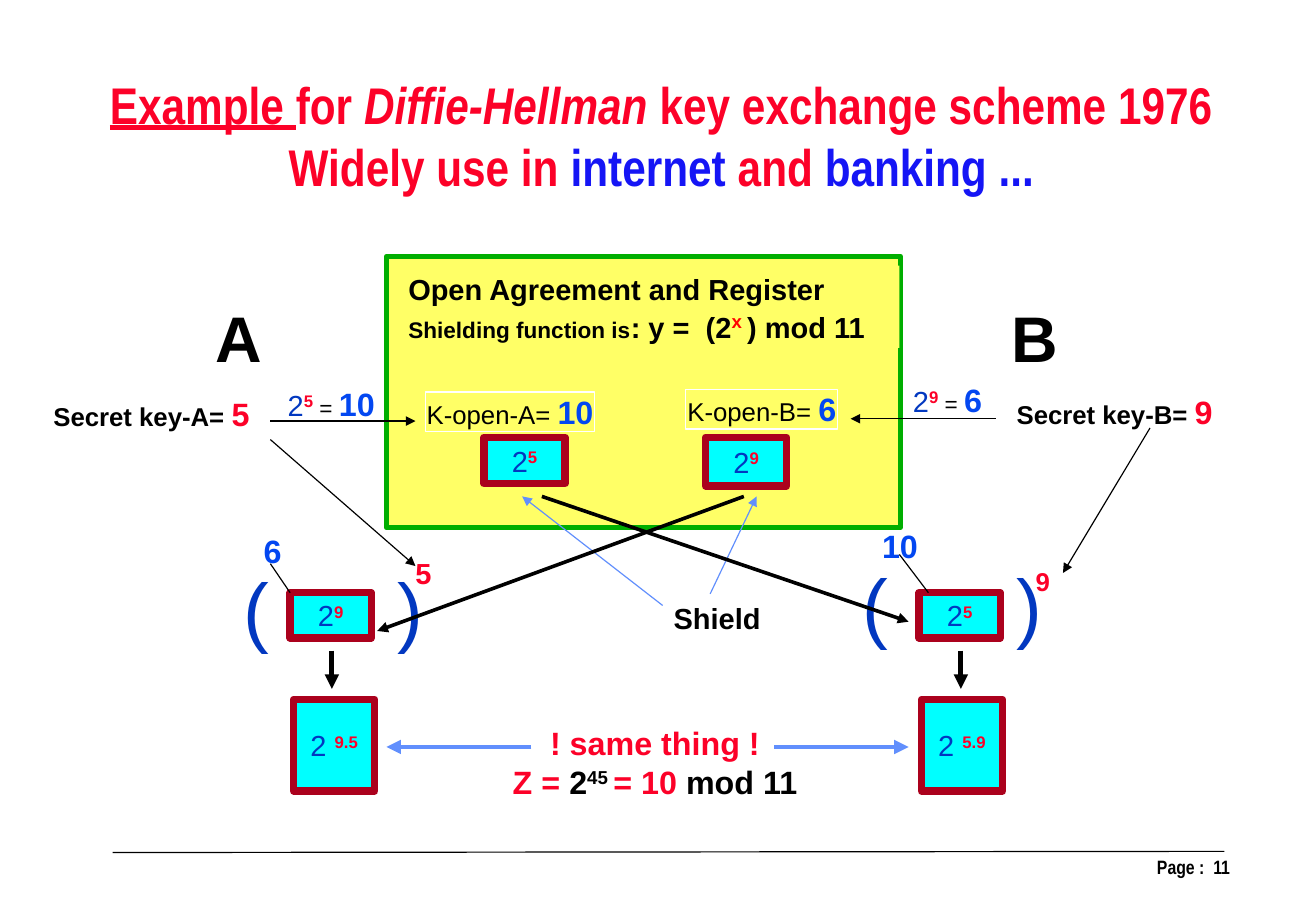
from dataclasses import dataclass, field
from typing import Any

from lxml.etree import SubElement
from pptx import Presentation
from pptx.dml.color import RGBColor
from pptx.enum.shapes import MSO_CONNECTOR, MSO_SHAPE
from pptx.enum.text import MSO_ANCHOR, MSO_AUTO_SIZE, PP_ALIGN
from pptx.oxml.ns import qn
from pptx.util import Inches, Pt

COLORS = {
    "black": "000000", "white": "FFFFFF", "red": "FC0128", "bright red": "FF0000",
    "blue": "0238C0", "key blue": "0347F1", "title blue": "1515F5", "arrow blue": "618FFD",
    "cyan": "00FFFF", "maroon": "AB011D", "yellow": "FFFF66", "green": "00AE00",
}


@dataclass
class Span:
    text: str
    size: float
    color: str = "black"
    bold: bool = True
    raised: bool = False
    extra: dict[str, Any] = field(default_factory=dict)


@dataclass
class Label:
    left: float
    top: float
    width: float
    height: float
    lines: list[list[Span]]
    align: PP_ALIGN = PP_ALIGN.CENTER
    wrap: bool = False
    margins: tuple[float, float] = (0.1, 0.05)
    spacing: float = 1.0
    tab: float = 0


@dataclass
class Panel:
    label: Label
    fill: str = ""
    line: str = ""
    weight: float = 0
    anchor: MSO_ANCHOR = MSO_ANCHOR.TOP


@dataclass
class Line:
    start: tuple[float, float]
    end: tuple[float, float]
    color: str = "black"
    weight: float = 0.75
    arrow: bool = True


def rgb(name: str) -> RGBColor:
    return RGBColor.from_string(COLORS[name])


def set_all(target: Any, values: dict[str, Any]) -> None:
    for name, value in values.items():
        setattr(target, name, value)


def write(box: Any, label: Label, font: str = "Arial", anchor: MSO_ANCHOR = MSO_ANCHOR.TOP,
          auto_size: MSO_AUTO_SIZE = MSO_AUTO_SIZE.NONE) -> None:
    frame = box.text_frame
    side, edge = (Inches(margin) for margin in label.margins)
    set_all(frame, {"margin_left": side, "margin_right": side, "margin_top": edge,
                    "margin_bottom": edge, "word_wrap": label.wrap,
                    "vertical_anchor": anchor, "auto_size": auto_size})
    for index, line in enumerate(label.lines):
        para = frame.add_paragraph() if index else frame.paragraphs[0]
        set_all(para, {"alignment": label.align, "line_spacing": label.spacing})
        if label.tab:
            stops = SubElement(para._p.get_or_add_pPr(), qn("a:tabLst"))
            SubElement(stops, qn("a:tab"), pos=str(Inches(label.tab)), algn="l")
        for item in line:
            span = para.add_run()
            span.text = item.text
            set_all(span.font, {"name": font, "size": Pt(item.size), "bold": item.bold, **item.extra})
            span.font.color.rgb = rgb(item.color)
            if item.raised:
                span._r.get_or_add_rPr().set("baseline", "30000")


def frame_of(label: Label) -> list[int]:
    return [Inches(value) for value in (label.left, label.top, label.width, label.height)]


def draw_label(page: Any, label: Label, font: str = "Arial") -> None:
    box = page.shapes.add_textbox(*frame_of(label))
    write(box, label, font, auto_size=MSO_AUTO_SIZE.SHAPE_TO_FIT_TEXT)


def draw_panel(page: Any, panel: Panel) -> None:
    box = page.shapes.add_shape(MSO_SHAPE.RECTANGLE, *frame_of(panel.label))
    box.shadow.inherit = False
    if panel.fill:
        box.fill.solid()
        box.fill.fore_color.rgb = rgb(panel.fill)
    else:
        box.fill.background()
    if panel.line:
        box.line.color.rgb = rgb(panel.line)
        box.line.width = Pt(panel.weight)
    else:
        box.line.fill.background()
    write(box, panel.label, anchor=panel.anchor)


def draw_line(page: Any, line: Line) -> None:
    points = [Inches(value) for value in (*line.start, *line.end)]
    connector = page.shapes.add_connector(MSO_CONNECTOR.STRAIGHT, *points)
    connector.line.color.rgb = rgb(line.color)
    connector.line.width = Pt(line.weight)
    if line.arrow:
        SubElement(connector.line._get_or_add_ln(), qn("a:tailEnd"), type="triangle")
    SubElement(connector._element.spPr, qn("a:effectLst"))


def power(exponent: str, base: str = "2") -> list[Span]:
    return [Span(base, 18, "blue", False), Span(exponent, 18, "red", raised=True)]


def power_box(left: float, top: float, height: float, exponent: str, base: str = "2") -> Panel:
    label = Label(left, top, 0.7, height, [power(exponent, base)])
    return Panel(label, "cyan", "maroon", 4.5, MSO_ANCHOR.MIDDLE)


def open_key(left: float, top: float, width: float, name: str, value: str) -> Panel:
    spans = [Span(f"K-open-{name}= ", 16, bold=False), Span(value, 20, "key blue")]
    return Panel(Label(left, top, width, 0.34, [spans], margins=(0, 0)), "", "white", 0.75)


def secret_key(left: float, top: float, name: str, value: str) -> Label:
    return Label(left, top, 1.91, 0.44, [[Span(f"Secret key-{name}= ", 16), Span(value, 20, "red")]])


def equation(left: float, top: float, width: float, exponent: str, value: str) -> Label:
    spans = power(exponent) + [Span(" = ", 14, bold=False), Span(value, 20, "key blue")]
    return Label(left, top, width, 0.44, [spans])


def word(left: float, top: float, width: float, height: float, text: str, size: float,
         color: str = "black") -> Label:
    return Label(left, top, width, height, [[Span(text, size, color)]])


def brackets(left: float, top: float, height: float, spacing: float) -> Label:
    return Label(left, top, 1.78, height, [[Span("(\t)", 48, "blue", False)]],
                 PP_ALIGN.LEFT, True, spacing=spacing, tab=1.33)


TITLE = Label(0.9, 0.63, 9.6, 1.08, [
    [Span("Example ", 32, "red", extra={"underline": True}), Span("for ", 32, "red"),
     Span("Diffie-Hellman", 32, "red", extra={"italic": True}),
     Span(" key exchange scheme 1976", 32, "red")],
    [Span("Widely use in ", 32, "red"), Span("internet", 32, "title blue"),
     Span(" and ", 32, "red"), Span("banking ...", 32, "title blue")],
], margins=(0, 0))
PAGE_NUMBER = Label(8.14, 7.31, 2.58, 0.3, [[Span("Page :  11", 12)]], PP_ALIGN.RIGHT, True, (0.12, 0.06))
AGREEMENT = Label(3.42, 2.29, 4.33, 0.71, [
    [Span("Open Agreement and Register", 18)],
    [Span("Shielding function is", 14), Span(": y =  (2", 18),
     Span("x ", 20, "bright red", raised=True), Span(") mod 11", 18)],
], PP_ALIGN.LEFT, True)
RESULT = Label(4.28, 6.19, 2.73, 0.77, [
    [Span("! same thing !", 20, "red")],
    [Span("Z = ", 20, "red"), Span("2", 20), Span("45 ", 20, raised=True),
     Span("= 10 ", 20, "red"), Span("mod 11", 20)],
])
PANELS = [
    Panel(Label(3.33, 2.21, 4.43, 2.34, []), "yellow", "green", 3),
    Panel(AGREEMENT, "yellow"),
    power_box(6.08, 3.77, 0.42, "9"), power_box(4.17, 3.77, 0.4, "5"),
    power_box(7.94, 6.03, 0.79, "5.9", "2 "), power_box(2.53, 6.03, 0.79, "9.5", "2 "),
    power_box(7.92, 5.11, 0.39, "5"), power_box(2.5, 5.11, 0.39, "9"),
    open_key(3.67, 3.38, 1.45, "A", "10"), open_key(5.91, 3.36, 1.31, "B", "6"),
]
LABELS = [
    word(1.75, 2.52, 0.61, 0.77, "A", 40), word(8.61, 2.52, 0.61, 0.77, "B", 40),
    RESULT, word(5.7, 5.13, 0.96, 0.4, "Shield", 18),
    secret_key(0.35, 3.35, "A", "5"), secret_key(8.65, 3.33, "B", "9"),
    equation(2.37, 3.26, 0.97, "5", "10"), equation(7.76, 3.23, 0.81, "9", "6"),
    brackets(7.33, 4.97, 0.67, 0.7), brackets(2, 4.79, 0.91, 1.0),
    word(8.82, 4.83, 0.33, 0.37, "9", 16, "red"), word(3.48, 4.74, 0.34, 0.4, "5", 18, "red"),
    word(7.5, 4.49, 0.51, 0.44, "10", 20, "key blue"), word(2.17, 4.53, 0.36, 0.44, "6", 20, "key blue"),
]
LINES = [
    Line((0.97, 7.35), (10.55, 7.34), arrow=False),
    Line((4.58, 6.44), (3.33, 6.44), "arrow blue", 3), Line((6.67, 6.44), (7.83, 6.44), "arrow blue", 3),
    Line((6.12, 5.12), (6.52, 4.28), "arrow blue"), Line((5.71, 5.22), (4.5, 4.28), "arrow blue"),
    Line((8.28, 5.61), (8.28, 5.94), weight=3), Line((2.86, 5.61), (2.86, 5.94), weight=3),
    Line((2.33, 3.63), (3.58, 3.63)), Line((8.58, 3.61), (7.33, 3.61)),
    Line((9.91, 3.69), (9.16, 4.94)), Line((2.33, 3.79), (3.58, 4.88)),
    Line((4.67, 4.28), (7.83, 5.36), weight=2.25), Line((6.41, 4.28), (3.25, 5.44), weight=2.25),
    Line((7.75, 4.78), (8, 5.11), arrow=False), Line((2.5, 5.11), (2.33, 4.86), arrow=False),
]


def main() -> None:
    deck = Presentation()
    set_all(deck, {"slide_width": Inches(11.34), "slide_height": Inches(7.88)})
    page = deck.slides.add_slide(deck.slide_layouts[5])
    title = page.shapes.title
    set_all(title, dict(zip(("left", "top", "width", "height"), frame_of(TITLE))))
    write(title, TITLE, "Arial Narrow")
    for panel in PANELS:
        draw_panel(page, panel)
    for label in LABELS:
        draw_label(page, label)
    for line in LINES:
        draw_line(page, line)
    draw_label(page, PAGE_NUMBER, "Arial Narrow")
    deck.save("out.pptx")


if __name__ == "__main__":
    main()
